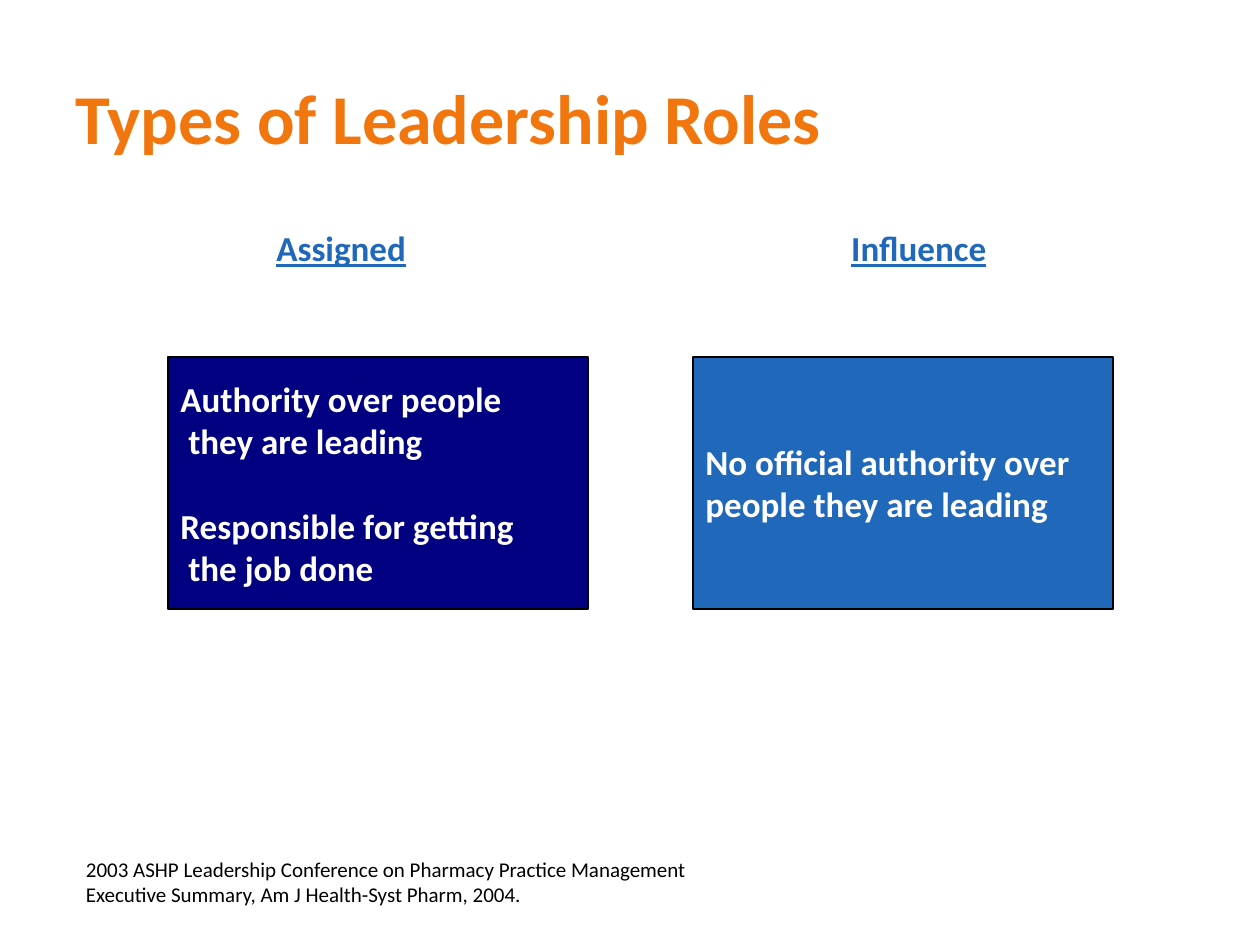
from pptx import Presentation
from pptx.dml.color import RGBColor
from pptx.enum.shapes import MSO_SHAPE
from pptx.enum.text import MSO_ANCHOR, PP_ALIGN
from pptx.util import Pt

RECT = MSO_SHAPE.RECTANGLE
TOP, MIDDLE = MSO_ANCHOR.TOP, MSO_ANCHOR.MIDDLE
LEFT, CENTER = PP_ALIGN.LEFT, PP_ALIGN.CENTER
ORANGE, BLUE, NAVY, BLACK, WHITE = "F2760E", "2068BA", "000080", "000000", "FFFFFF"


def color(value):
    return RGBColor.from_string(value)


def write(shape, lines, fmt, anchor=TOP, align=LEFT):
    """Each line is (text, left indent, space before)."""
    tf = shape.text_frame
    tf.word_wrap = True
    tf.vertical_anchor = anchor
    for i, (text, indent, before) in enumerate(lines):
        p = tf.paragraphs[0] if i == 0 else tf.add_paragraph()
        p.alignment = align
        p.space_before = Pt(before)
        if indent:
            p._p.get_or_add_pPr().set("marL", str(Pt(indent)))
        r = p.add_run()
        r.text = text
        r.font.name = "Calibri"
        r.font.color.rgb = color(fmt["color"])
        for name in ("size", "bold", "underline"):
            if name in fmt:
                setattr(r.font, name, fmt[name])


prs = Presentation()
prs.slide_width, prs.slide_height = Pt(720), Pt(540)
s = prs.slides.add_slide(prs.slide_layouts[6])

# Title
title = s.shapes.add_textbox(Pt(36), Pt(21.6), Pt(648), Pt(90))
write(title, [("Types of Leadership Roles", 0, 0)],
      {"size": Pt(40), "bold": True, "color": ORANGE}, MIDDLE)

# Column headings
heading_fmt = {"size": Pt(20), "bold": True, "underline": True, "color": BLUE}
for x, text in ((36, "Assigned"), (366, "Influence")):
    heading = s.shapes.add_textbox(Pt(x), Pt(126), Pt(318), Pt(36))
    write(heading, [(text, 0, 0)], heading_fmt, align=CENTER)

# Role boxes
roles = [
    (96, NAVY, [("Authority over people", 0, 0),
                ("they are leading", 4.5, 0),
                ("Responsible for getting", 0, 24.4),
                ("the job done", 4.5, 0)]),
    (396, BLUE, [("No official authority over", 0, 0),
                 ("people they are leading", 0, 0)]),
]
for x, fill, lines in roles:
    box = s.shapes.add_shape(RECT, Pt(x), Pt(204), Pt(240), Pt(144))
    box.shadow.inherit = False
    box.fill.solid()
    box.fill.fore_color.rgb = color(fill)
    box.line.color.rgb = color(BLACK)
    box.line.width = Pt(0.75)
    write(box, lines, {"size": Pt(20), "bold": True, "color": WHITE}, MIDDLE)

# Citation
citation = s.shapes.add_textbox(Pt(42), Pt(486), Pt(492), Pt(36.5))
write(citation, [
    ("2003 ASHP Leadership Conference on Pharmacy Practice Management", 0, 0),
    ("Executive Summary, Am J Health-Syst Pharm, 2004.", 0, 0),
], {"size": Pt(12), "color": BLACK})

prs.save("out.pptx")
